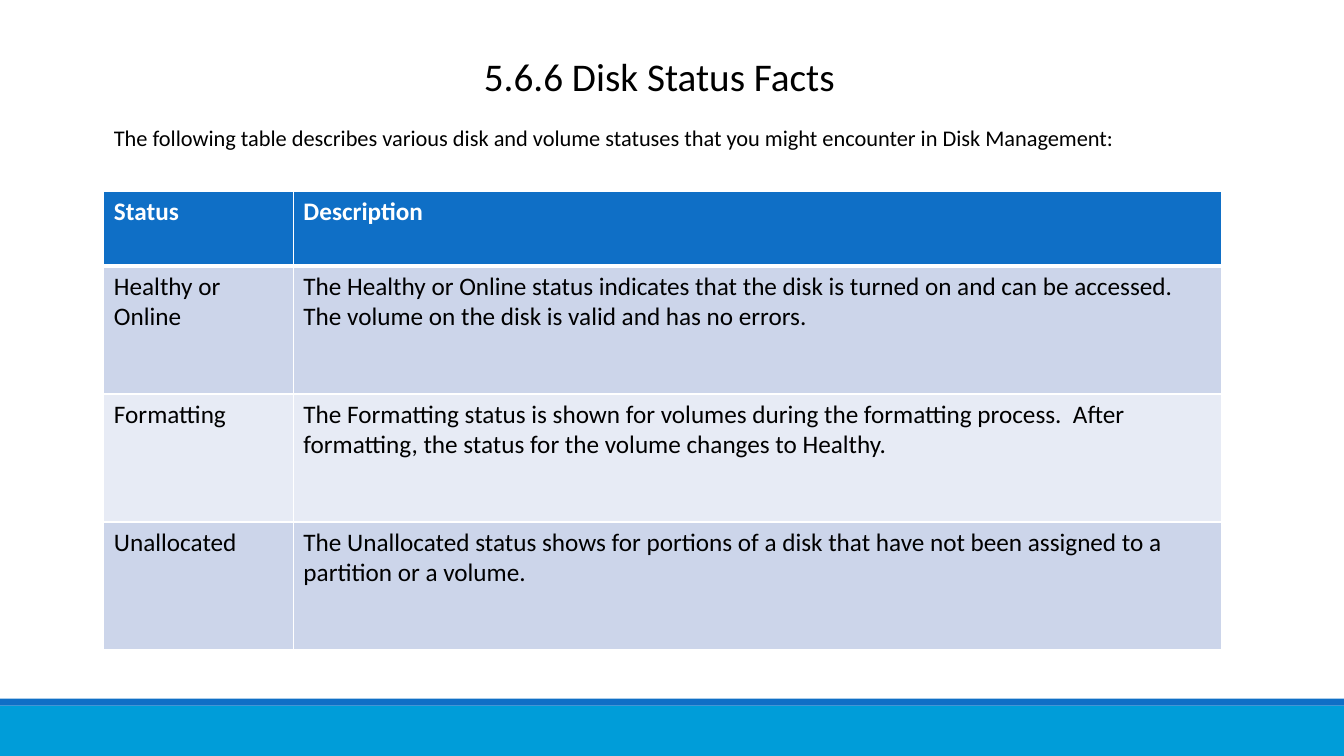
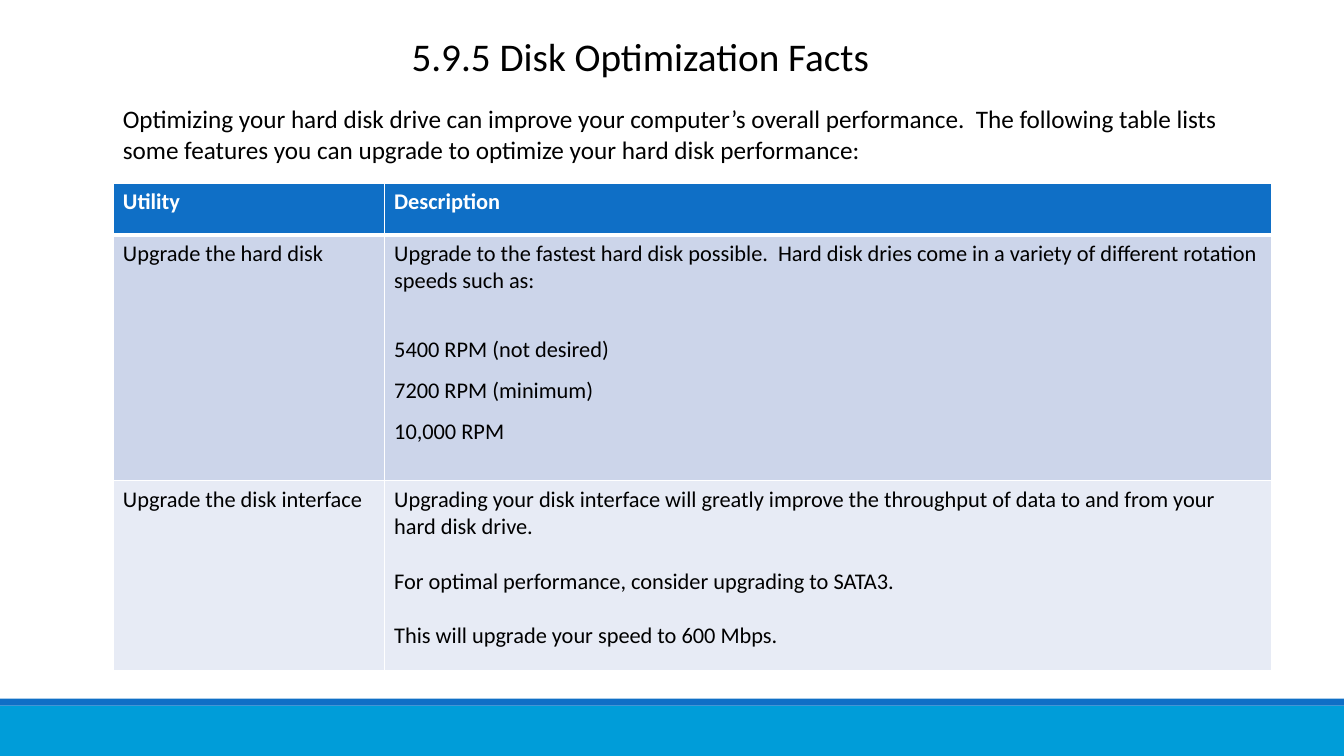
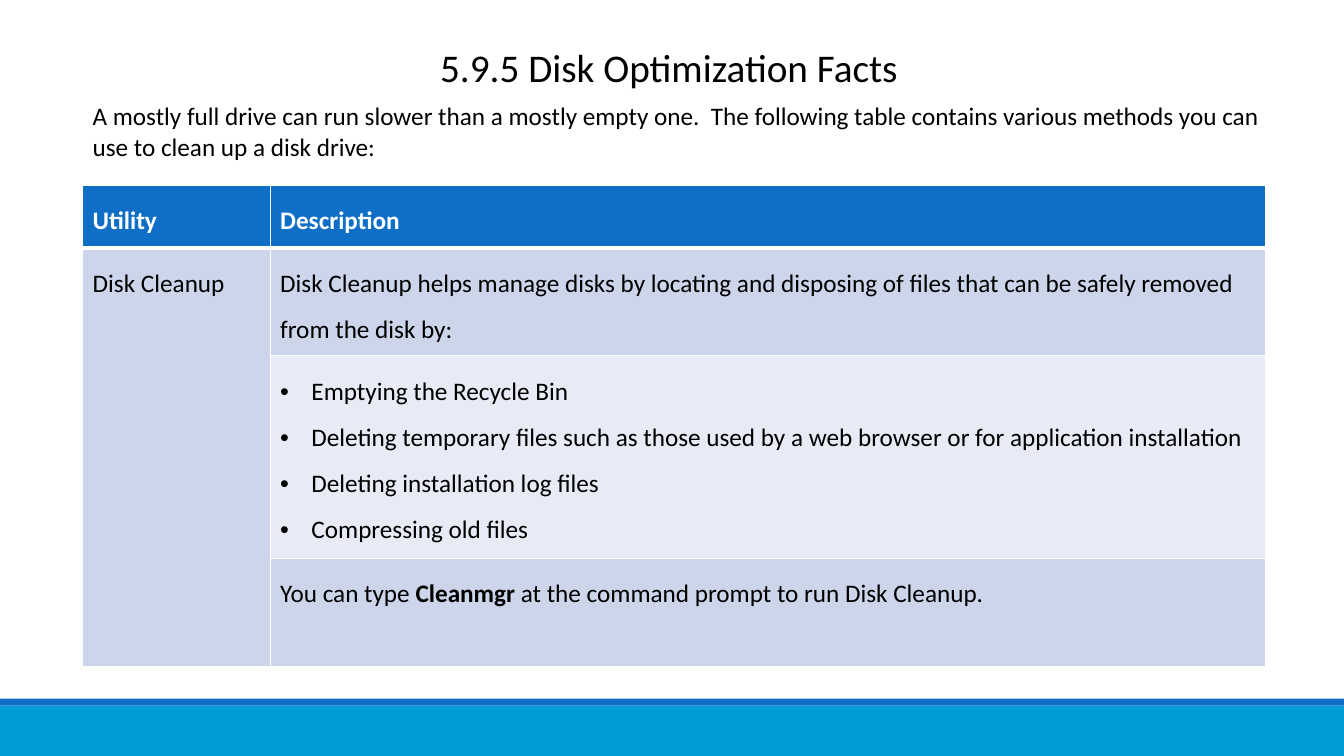
from lxml import etree
from pptx import Presentation
from pptx.dml.color import RGBColor
from pptx.enum.shapes import MSO_SHAPE
from pptx.enum.text import MSO_ANCHOR, MSO_AUTO_SIZE, PP_ALIGN
from pptx.oxml.ns import qn
from pptx.util import Inches, Pt

RECT = MSO_SHAPE.RECTANGLE
TOP, GROW = MSO_ANCHOR.TOP, MSO_AUTO_SIZE.SHAPE_TO_FIT_TEXT
LEFT, CENTER = PP_ALIGN.LEFT, PP_ALIGN.CENTER

# Shared style
WIDTH, HEIGHT = Inches(13.333), Inches(7.5)
FONT = "Calibri"
BLACK, WHITE = "000000", "FFFFFF"
BLUE, CYAN = "0F6FC6", "009DD9"
ROW_FILLS = ("E7EBF5", "CCD5EA")  # even and odd body rows
LINE_PT, HEADER_LINE_PT = 1, 3
TITLE_PT, TITLE_HEIGHT = 28, 7.6
BULLET_INDENT = Inches(0.31)
GAP = {"space_before": Pt(19.5)}  # one line of 16 pt text
LOOSE = {"line_spacing": 1.5}
BULLET = {"bullet": True}


def color(value):
    return RGBColor.from_string(value)


def across(percent):
    return round(WIDTH * percent / 100)


def down(percent):
    return round(HEIGHT * percent / 100)


def place(left, top, width, height):
    """Turn percentages of the slide into a box."""
    return across(left), down(top), across(width), down(height)


def add_bullet(p):
    pPr = p._p.get_or_add_pPr()
    pPr.set("marL", str(BULLET_INDENT))
    pPr.set("indent", str(-BULLET_INDENT))
    etree.SubElement(pPr, qn("a:buFont")).set("typeface", "Arial")
    etree.SubElement(pPr, qn("a:buChar")).set("char", "•")


def write(p, text, size, ink=BLACK, bold=False, bullet=False, **formats):
    """Fill a paragraph; text between asterisks is bold."""
    for name, value in formats.items():
        setattr(p, name, value)
    if bullet:
        add_bullet(p)
    for i, part in enumerate(text.split("*")):
        r = p.add_run()
        r.text = part
        font = {"name": FONT, "size": Pt(size), "bold": bold or i % 2 == 1}
        for name, value in font.items():
            setattr(r.font, name, value)
        r.font.color.rgb = color(ink)


def fill_frame(shape, box, text, size, alignment):
    shape.left, shape.top, shape.width, shape.height = box
    tf = shape.text_frame
    for name, value in {"word_wrap": True, "auto_size": GROW,
                        "vertical_anchor": TOP}.items():
        setattr(tf, name, value)
    write(tf.paragraphs[0], text, size, alignment=alignment)


def add_title(s, text, left, top, width):
    box = place(left, top, width, TITLE_HEIGHT)
    fill_frame(s.shapes.title, box, text, TITLE_PT, CENTER)


def add_intro(s, text, size, *box):
    box = place(*box)
    fill_frame(s.shapes.add_textbox(*box), box, text, size, LEFT)


def set_borders(cell, row):
    widths = {"L": LINE_PT, "R": LINE_PT,
              "T": HEADER_LINE_PT if row == 1 else LINE_PT,
              "B": HEADER_LINE_PT if row == 0 else LINE_PT}
    tcPr = cell._tc.get_or_add_tcPr()
    for i, (side, width) in enumerate(widths.items()):
        ln = etree.Element(qn("a:ln" + side), w=str(Pt(width)))
        fill = etree.SubElement(ln, qn("a:solidFill"))
        etree.SubElement(fill, qn("a:srgbClr")).set("val", WHITE)
        tcPr.insert(i, ln)


def add_table(s, left, top, cols, heights, rows, size, **formats):
    """Each cell is a text or a list of (text, formats) paragraphs."""
    box = place(left, top, sum(cols), sum(heights))
    table = s.shapes.add_table(len(rows), len(cols), *box).table
    for column, width in zip(table.columns, cols):
        column.width = across(width)
    for r, (height, row) in enumerate(zip(heights, rows)):
        table.rows[r].height = down(height)
        header = r == 0
        for c, content in enumerate(row):
            cell = table.cell(r, c)
            cell.fill.solid()
            cell.fill.fore_color.rgb = color(BLUE if header else ROW_FILLS[r % 2])
            set_borders(cell, r)
            if content is None:
                continue
            lines = [(content, {})] if isinstance(content, str) else content
            tf = cell.text_frame
            for i, (text, extra) in enumerate(lines):
                p = tf.add_paragraph() if i else tf.paragraphs[0]
                write(p, text, size, WHITE if header else BLACK, header,
                      **formats, **extra)
    return table


def add_bands(layout, s):
    """Draw the footer bands and move them to the layout."""
    for top, height, fill in ((93.33, 6.67, CYAN), (92.4, 0.93, BLUE)):
        band = s.shapes.add_shape(RECT, *place(0, top, 100, height))
        band.shadow.inherit = False
        band.fill.solid()
        band.fill.fore_color.rgb = color(fill)
        band.line.fill.background()
        layout.shapes.element.append(band.element)


def disk_status(s):
    left = 7.73
    add_title(s, "5.6.6 Disk Status Facts", 22.8, 6.27, 52.5)
    add_intro(s, "The following table describes various disk and volume statuses "
              "that you might encounter in Disk Management:",
              16, left, 15.73, 82.28, 4.93)
    rows = [
        ("Status", "Description"),
        ("Healthy or Online",
         "The Healthy or Online status indicates that the disk is turned on and "
         "can be accessed.  The volume on the disk is valid and has no errors."),
        ("Formatting",
         "The Formatting status is shown for volumes during the formatting "
         "process.  After formatting, the status for the volume changes to "
         "Healthy."),
        ("Unallocated",
         "The Unallocated status shows for portions of a disk that have not been "
         "assigned to a partition or a volume."),
    ]
    add_table(s, left, 25.33, (14.1, 69.08), [9.87] + [16.93] * 3, rows, 18)


def disk_upgrades(s):
    left = 8.4
    add_title(s, "5.9.5 Disk Optimization Facts", 20.93, 3.6, 53.4)
    add_intro(s, "Optimizing your hard disk drive can improve your computer’s "
              "overall performance.  The following table lists some features you "
              "can upgrade to optimize your hard disk performance:",
              18, left, 13.07, 86.18, 9.47)
    rows = [
        ("Utility", "Description"),
        ("Upgrade the hard disk", [
            ("Upgrade to the fastest hard disk possible.  Hard disk dries come in "
             "a variety of different rotation speeds such as:", {}),
            ("5400 RPM (not desired)", {**LOOSE, **GAP}),
            ("7200 RPM (minimum)", LOOSE),
            ("10,000 RPM", LOOSE)]),
        ("Upgrade the disk interface", [
            ("Upgrading your disk interface will greatly improve the throughput "
             "of data to and from your hard disk drive.", {}),
            ("For optimal performance, consider upgrading to SATA3.", GAP),
            ("This will upgrade your speed to 600 Mbps.", GAP)]),
    ]
    add_table(s, left, 24.27, (20.18, 66), (6.8, 32.53, 25.07), rows, 16)


def disk_cleanup(s):
    left = 6.15
    add_title(s, "5.9.5 Disk Optimization Facts", 30.45, 5.07, 38.63)
    rows = [
        ("Utility", "Description"),
        ("Disk Cleanup",
         "Disk Cleanup helps manage disks by locating and disposing of files that "
         "can be safely removed from the disk by:"),
        (None, [
            ("Emptying the Recycle Bin", BULLET),
            ("Deleting temporary files such as those used by a web browser or for "
             "application installation", BULLET),
            ("Deleting installation log files", BULLET),
            ("Compressing old files", BULLET)]),
        (None,
         "You can type *Cleanmgr* at the command prompt to run Disk Cleanup."),
    ]
    table = add_table(s, left, 24.53, (13.95, 74.1), (8.27, 14.27, 26.8, 14.27),
                      rows, 18, **LOOSE)
    table.cell(1, 0).merge(table.cell(3, 0))
    add_intro(s, "A mostly full drive can run slower than a mostly empty one.  The "
              "following table contains various methods you can use to clean up a "
              "disk drive:", 18, left, 12.67, 90.98, 9.47)


def main():
    prs = Presentation()
    prs.slide_width, prs.slide_height = WIDTH, HEIGHT
    layout = prs.slide_layouts.get_by_name("Title Only")
    for i, build in enumerate((disk_status, disk_upgrades, disk_cleanup)):
        s = prs.slides.add_slide(layout)
        if i == 0:
            add_bands(layout, s)
        build(s)
    prs.save("out.pptx")


if __name__ == "__main__":
    main()
